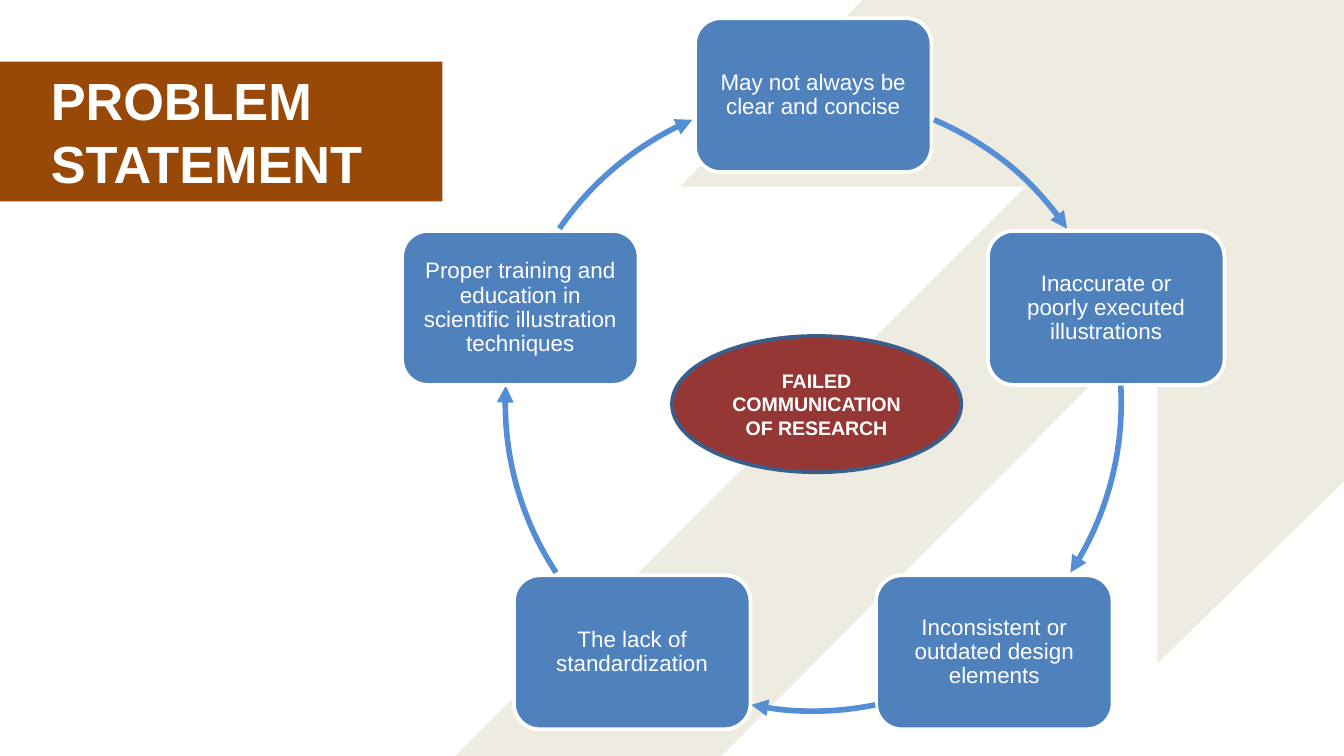
from math import cos, radians, sin

from lxml import etree
from pptx import Presentation
from pptx.dml.color import RGBColor
from pptx.enum.shapes import MSO_SHAPE
from pptx.enum.text import MSO_ANCHOR, MSO_AUTO_SIZE, PP_ALIGN
from pptx.oxml.ns import qn
from pptx.util import Pt

RECT, ROUND_RECT = MSO_SHAPE.RECTANGLE, MSO_SHAPE.ROUNDED_RECTANGLE
OVAL, ARC = MSO_SHAPE.OVAL, MSO_SHAPE.ARC
TOP, MIDDLE = MSO_ANCHOR.TOP, MSO_ANCHOR.MIDDLE
LEFT, CENTER = PP_ALIGN.LEFT, PP_ALIGN.CENTER

WHITE = RGBColor(0xFF, 0xFF, 0xFF)
BEIGE = RGBColor(0xEE, 0xEC, 0xE1)
BROWN = RGBColor(0x98, 0x48, 0x07)
BLUE = RGBColor(0x4F, 0x81, 0xBD)
ARROW_BLUE = RGBColor(0x55, 0x8E, 0xD5)
RED = RGBColor(0x95, 0x37, 0x35)
NAVY = RGBColor(0x3A, 0x5F, 0x8C)

TITLE = "PROBLEM\nSTATEMENT"
HUB = "FAILED COMMUNICATION OF RESEARCH"
# Clockwise from the top: text, then start and end angle of the arrow that
# leaves the box (degrees clockwise from three o'clock).
STEPS = [
    ("May not always be clear and concise", 293.1, 325.5),
    ("Inaccurate or poorly executed illustrations", 356.75, 33.4),
    ("Inconsistent or outdated design elements", 78.4, 101.6),
    ("The lack of standardization", 146.6, 183.25),
    ("Proper training and education in scientific illustration techniques",
     214.5, 246.9),
]
BACKDROP = [(462, 0), (364.5, 100), (549.5, 100), (244, 405), (386.5, 405),
            (620, 170.5), (620, 355.5), (720, 258), (720, 0)]

CX, CY, RADIUS = 435.7, 216, 165
BOX_W, BOX_H, BOX_INSET = 126.7, 82.5, 7.5


def add_shape(kind, x, y, w, h, fill=None, line=None, weight=2):
    sp = slide.shapes.add_shape(kind, Pt(x), Pt(y), Pt(w), Pt(h))
    style(sp, fill, line, weight)
    return sp


def style(sp, fill, line=None, weight=2):
    sp.shadow.inherit = False
    if fill is None:
        sp.fill.background()
    else:
        sp.fill.solid()
        sp.fill.fore_color.rgb = fill
    if line is None:
        sp.line.fill.background()
    else:
        sp.line.color.rgb = line
        sp.line.width = Pt(weight)


def write(sp, text, size, bold=False, align=CENTER, anchor=MIDDLE, spacing=1.0):
    tf = sp.text_frame
    tf.text = text
    tf.word_wrap = True
    tf.vertical_anchor = anchor
    for p in tf.paragraphs:
        p.alignment = align
        p.line_spacing = spacing
        p.font.name = "Arial"
        p.font.size = Pt(size)
        p.font.bold = bold
        p.font.color.rgb = WHITE


prs = Presentation()
prs.slide_width, prs.slide_height = Pt(720), Pt(405)
slide = prs.slides.add_slide(prs.slide_layouts[5])

builder = slide.shapes.build_freeform(Pt(BACKDROP[0][0]), Pt(BACKDROP[0][1]))
builder.add_line_segments([(Pt(x), Pt(y)) for x, y in BACKDROP[1:]], close=True)
style(builder.convert_to_shape(), BEIGE)

band = add_shape(RECT, 0, 33, 237, 75, BROWN)
title = slide.shapes.title
title.left, title.top, title.width, title.height = Pt(20), Pt(33), Pt(183), Pt(75)
write(title, TITLE, 28, bold=True, align=LEFT, anchor=TOP)
title.text_frame.auto_size = MSO_AUTO_SIZE.NONE
band.element.addnext(title.element)  # stack the title above its band

for i, (text, start, end) in enumerate(STEPS):
    angle = radians(-90 + i * 360 / len(STEPS))
    x, y = CX + RADIUS * cos(angle), CY + RADIUS * sin(angle)
    box = add_shape(ROUND_RECT, x - BOX_W / 2, y - BOX_H / 2, BOX_W, BOX_H,
                    BLUE, WHITE)
    write(box, text, 12, spacing=0.9)
    tf = box.text_frame
    tf.margin_left = tf.margin_right = Pt(BOX_INSET)
    tf.margin_top = tf.margin_bottom = Pt(BOX_INSET)

    arrow = add_shape(ARC, CX - RADIUS, CY - RADIUS, 2 * RADIUS, 2 * RADIUS,
                      line=ARROW_BLUE, weight=3)
    # Angles are stored in 1/60000 degree, adjustments in 1/100000.
    arrow.adjustments[0], arrow.adjustments[1] = start * 0.6, end * 0.6
    ln = arrow.element.spPr.find(qn("a:ln"))
    etree.SubElement(ln, qn("a:tailEnd"), type="triangle")

hub = add_shape(OVAL, 360, 180, 155, 73, RED, NAVY)
write(hub, HUB, 10.5, bold=True)

prs.save("out.pptx")
